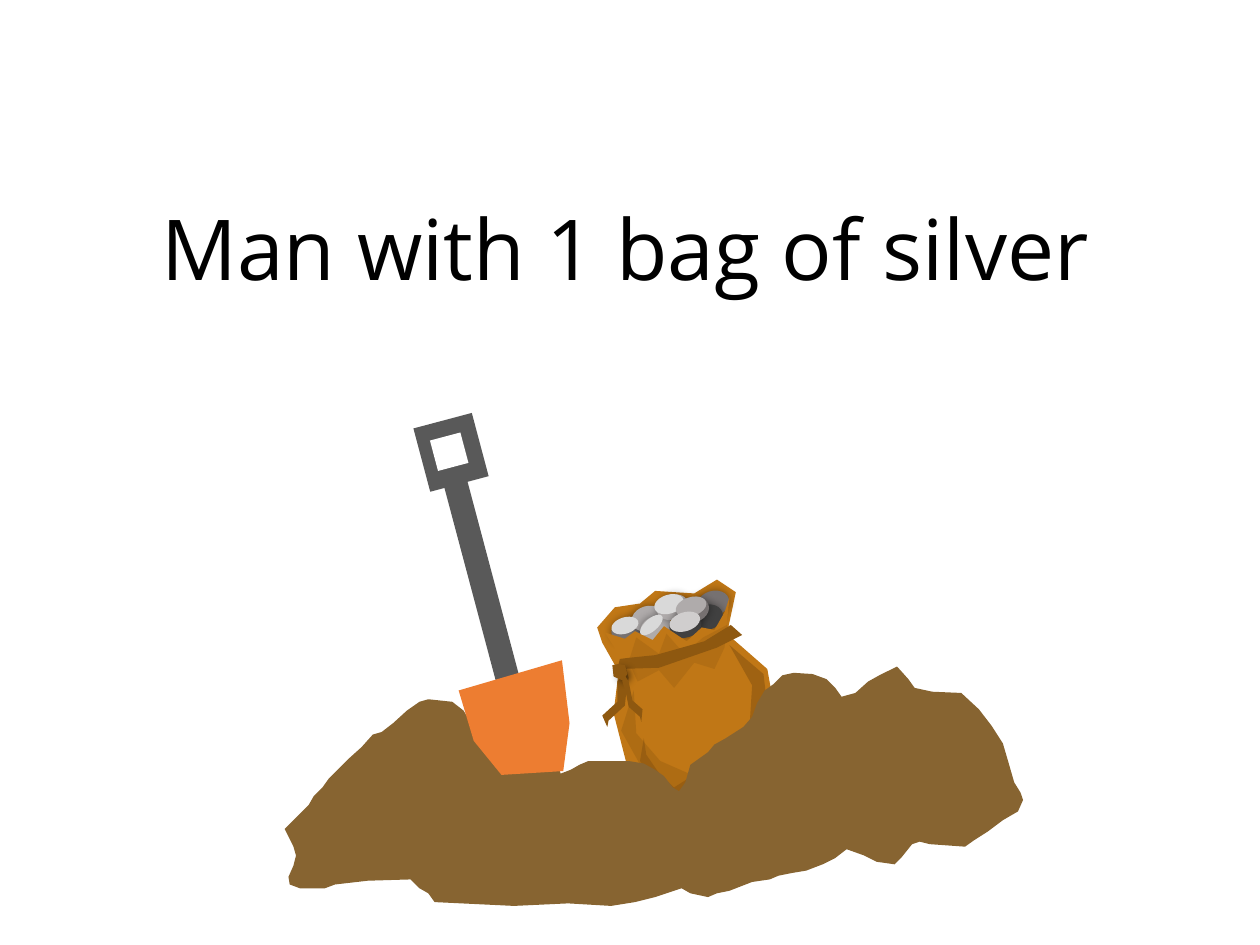
from lxml import etree
from pptx import Presentation
from pptx.dml.color import RGBColor
from pptx.enum import shapes, text
from pptx.oxml.ns import qn
from pptx.util import Inches, Pt

BLACK = RGBColor(0x00, 0x00, 0x00)
WHITE = RGBColor(0xFF, 0xFF, 0xFF)
SACK = RGBColor(0xC0, 0x77, 0x16)
FOLD = RGBColor(0x8E, 0x58, 0x10)
SOIL = RGBColor(0x87, 0x64, 0x31)
STEEL = RGBColor(0x59, 0x59, 0x59)
BLADE = RGBColor(0xED, 0x7D, 0x31)
COIN_BLACK = RGBColor(0x40, 0x40, 0x40)
COIN_DARK = RGBColor(0x76, 0x71, 0x71)
COIN_MID = RGBColor(0xAF, 0xAB, 0xAB)
COIN_PALE = RGBColor(0xD0, 0xCE, 0xCE)
COIN_LIGHT = RGBColor(0xD9, 0xD9, 0xD9)

BAG_TILT = -17.4
SHOVEL_TILT = -14.9

# Outlines in inches from the top left corner of each region
SACK_BODY = [(0.78, 1.1), (0.91, 1.33), (0.87, 1.66), (0.97, 2.05), (1.2, 2.38), (1.43, 2.45),
             (1.63, 2.44), (1.94, 2.34), (2.14, 2.16), (2.18, 1.81), (2.09, 1.31), (1.77, 1.03),
             (1.84, 0.7), (1.69, 0.6), (1.51, 0.71), (1.2, 0.69), (1.08, 0.79), (0.88, 0.82),
             (0.74, 0.98)]
SACK_FRONT = [(0.8, 1.02), (0.96, 1.07), (1.04, 1.01), (1.18, 1.08), (1.27, 0.97), (1.45, 1.09),
              (1.57, 0.98), (1.67, 1), (1.75, 0.86), (1.79, 0.74), (1.76, 1.02), (1.66, 1.21),
              (1.14, 1.38), (0.96, 1.27)]
DEEP_SHADE = [(1.08, 2.04), (1.28, 2.33), (1.53, 2.39), (1.91, 2.27), (2.1, 2.09), (2.11, 1.77),
              (2.06, 1.35), (1.79, 1.12), (1.97, 1.44), (1.95, 1.76), (1.82, 2), (1.54, 2.13),
              (1.35, 2.25), (1.24, 2.15), (1.13, 1.99), (1.11, 1.86)]
SOFT_SHADE = [(2.12, 1.78), (2.12, 2.11), (1.94, 2.29), (1.56, 2.41), (1.3, 2.38), (1.12, 2.14),
              (0.93, 1.8), (1.03, 1.48), (1.05, 1.82), (1.24, 2.04), (1.49, 2.15), (1.79, 2.1),
              (2.01, 2.08), (2.05, 1.95), (2.05, 1.76), (2, 1.66)]
NECK_FOLDS = [(0.99, 1.25), (1.06, 1.41), (1.23, 1.32), (1.35, 1.46), (1.51, 1.26), (1.67, 1.31),
              (1.75, 1.14), (1.77, 0.96), (1.58, 1.06), (1.43, 1.19), (1.29, 1.03), (1.23, 1.19),
              (1.05, 1.06)]
ROPE = [(0.9, 1.31), (1.23, 1.3), (1.69, 1.14), (1.89, 1.04), (1.8, 0.96), (1.59, 1.09),
        (1.2, 1.2), (1, 1.22), (0.92, 1.23)]
LEFT_TAIL = [(0.78, 1.68), (0.9, 1.57), (0.9, 1.41), (0.97, 1.31), (0.99, 1.38), (0.97, 1.5),
             (0.96, 1.6), (0.83, 1.72), (0.82, 1.77)]
KNOT = [(0.86, 1.28), (0.87, 1.37), (0.94, 1.4), (0.98, 1.35), (0.96, 1.28), (0.91, 1.27)]
RIGHT_TAIL = [(1.1, 1.63), (1.02, 1.56), (0.99, 1.41), (0.94, 1.33), (0.94, 1.41), (0.97, 1.51),
              (0.99, 1.61), (1.08, 1.69), (1.09, 1.73)]
COIN_EDGES = [(0.85, 0.9, COIN_DARK), (1.01, 0.81, COIN_MID), (1.08, 0.89, COIN_MID),
              (1.21, 0.72, COIN_MID), (1.53, 0.69, COIN_DARK), (1.48, 0.8, COIN_BLACK),
              (1.31, 0.86, COIN_BLACK), (1.37, 0.74, COIN_DARK)]
COIN_FACES = [((1.19, 0.72, 0.24, 0.15), COIN_LIGHT, BAG_TILT),
              ((1.36, 0.74, 0.25, 0.15), COIN_MID, BAG_TILT),
              ((0.85, 0.9, 0.22, 0.13), COIN_LIGHT, BAG_TILT),
              ((1.06, 0.91, 0.22, 0.1), COIN_LIGHT, -40.8),
              ((1.31, 0.86, 0.25, 0.15), COIN_PALE, BAG_TILT)]
SHOVEL_BLADE = [(0.98, 3.15), (0.76, 2.88), (0.64, 2.48), (1.46, 2.24), (1.52, 2.74), (1.47, 3.12)]
MOUND = [(0.26, 1.58), (0.45, 1.39), (0.49, 1.32), (0.56, 1.25), (0.61, 1.18), (0.77, 1.02),
         (0.87, 0.93), (0.96, 0.83), (1.03, 0.81), (1.12, 0.74), (1.23, 0.64), (1.33, 0.57),
         (1.4, 0.55), (1.59, 0.57), (1.68, 0.64), (1.75, 0.76), (1.8, 0.83), (1.82, 0.9),
         (1.89, 0.95), (1.96, 0.9), (2.08, 0.88), (2.27, 0.9), (2.36, 0.94), (2.41, 1),
         (2.45, 1.14), (2.53, 1.11), (2.6, 1.07), (2.67, 1.04), (2.99, 1.04), (3.11, 1.06),
         (3.2, 1.11), (3.27, 1.16), (3.34, 1.25), (3.39, 1.28), (3.44, 1.21), (3.48, 1.07),
         (3.62, 0.97), (3.67, 0.91), (3.76, 0.86), (3.9, 0.77), (3.97, 0.69), (4.01, 0.58),
         (4.07, 0.48), (4.14, 0.43), (4.21, 0.36), (4.3, 0.34), (4.45, 0.35), (4.56, 0.39),
         (4.63, 0.46), (4.68, 0.53), (4.79, 0.5), (4.89, 0.41), (4.98, 0.36), (5.12, 0.29),
         (5.21, 0.39), (5.26, 0.46), (5.4, 0.49), (5.63, 0.5), (5.77, 0.63), (5.87, 0.76),
         (5.96, 0.9), (6.01, 1.07), (6.05, 1.21), (6.1, 1.29), (6.12, 1.35), (6.08, 1.44),
         (5.96, 1.51), (5.84, 1.6), (5.73, 1.67), (5.66, 1.72), (5.38, 1.7), (5.3, 1.68),
         (5.24, 1.7), (5.16, 1.8), (5.1, 1.86), (4.96, 1.84), (4.86, 1.79), (4.72, 1.74),
         (4.63, 1.81), (4.53, 1.86), (4.4, 1.91), (4.28, 1.93), (4.18, 1.95), (4.11, 1.98),
         (3.97, 2), (3.79, 2.07), (3.69, 2.09), (3.62, 2.12), (3.48, 2.09), (3.41, 2.05),
         (3.32, 2.08), (3.2, 2.12), (3.04, 2.16), (2.85, 2.19), (2.51, 2.17), (2.08, 2.19),
         (1.45, 2.16), (1.4, 2.09), (1.33, 2.05), (1.26, 1.98), (0.92, 1.99), (0.66, 2.02),
         (0.58, 2.05), (0.38, 2.05), (0.3, 2.02), (0.29, 1.96), (0.33, 1.87), (0.35, 1.79),
         (0.33, 1.72)]


def paint(part, color, alpha=None):
    part.shadow.inherit = False
    part.fill.solid()
    part.fill.fore_color.rgb = color
    part.line.fill.background()
    if alpha is not None:
        tint = part.fill._xPr.find(qn("a:solidFill"))[0]
        etree.SubElement(tint, qn("a:alpha"), val=str(alpha * 1000))


def cast_shadow(part, blur, distance=0, angle=0):
    effects = part._element.spPr.find(qn("a:effectLst"))
    shadow = etree.SubElement(effects, qn("a:outerShdw"), blurRad=str(Pt(blur)),
                              dist=str(Pt(distance)), dir=str(angle * 60000), rotWithShape="0")
    tint = etree.SubElement(shadow, qn("a:srgbClr"), val=str(BLACK))
    etree.SubElement(tint, qn("a:alpha"), val="40000")


def add_outline(parent, origin, points, color, alpha=None):
    start, *rest = [(Inches(origin[0] + x), Inches(origin[1] + y)) for x, y in points]
    builder = parent.build_freeform(*start)
    builder.add_line_segments(rest, close=True)
    part = builder.convert_to_shape()
    paint(part, color, alpha)
    return part


def add_preset(parent, origin, kind, box, color, tilt):
    x, y, width, height = box
    part = parent.add_shape(kind, Inches(origin[0] + x), Inches(origin[1] + y),
                            Inches(width), Inches(height))
    part.rotation = tilt
    paint(part, color)
    return part


def place_title(slide, left, top, width, height):
    title = slide.shapes.title
    title.left, title.top = Inches(left), Inches(top)
    title.width, title.height = Inches(width), Inches(height)
    frame = title.text_frame
    frame.word_wrap = True
    frame.auto_size = text.MSO_AUTO_SIZE.SHAPE_TO_FIT_TEXT
    frame.vertical_anchor = text.MSO_ANCHOR.TOP
    line = frame.paragraphs[0]
    line.alignment = text.PP_ALIGN.CENTER
    words = line.add_run()
    words.text = "Man with 1 bag of silver"
    words.font.name = "Open Sans"
    words.font.size = Pt(48)
    words.font.color.rgb = BLACK


def draw_bag(slide, left, top):
    origin = left, top
    bag = slide.shapes.add_group_shape().shapes
    oval = shapes.MSO_SHAPE.OVAL
    add_outline(bag, origin, SACK_BODY, SACK)
    # Coins behind the front of the sack
    for x, y, color in COIN_EDGES:
        coin = add_preset(bag, origin, oval, (x, y, 0.26, 0.2), color, BAG_TILT)
        cast_shadow(coin, 5)
    # Front, shading and rope
    add_outline(bag, origin, SACK_FRONT, SACK)
    for points, alpha in ((DEEP_SHADE, 65), (SOFT_SHADE, 35), (NECK_FOLDS, 28),
                          (ROPE, None), (LEFT_TAIL, None)):
        add_outline(bag, origin, points, FOLD, alpha)
    cast_shadow(add_outline(bag, origin, KNOT, FOLD), 4, 3, 45)
    add_outline(bag, origin, RIGHT_TAIL, FOLD)
    # Bright coin faces
    for box, color, tilt in COIN_FACES:
        add_preset(bag, origin, oval, box, color, tilt)


def draw_shovel(slide, left, top):
    origin = left, top
    shovel = slide.shapes.add_group_shape().shapes
    bar = shapes.MSO_SHAPE.RECTANGLE
    # Shaft and grip, blade, then the opening in the grip
    for box in ((0.73, 0.68, 0.19, 1.88), (0.34, 0.33, 0.48, 0.52)):
        add_preset(shovel, origin, bar, box, STEEL, SHOVEL_TILT)
    add_outline(shovel, origin, SHOVEL_BLADE, BLADE)
    add_preset(shovel, origin, bar, (0.44, 0.46, 0.25, 0.25), WHITE, SHOVEL_TILT)


def main():
    deck = Presentation()
    deck.slide_width, deck.slide_height = Inches(10), Inches(7.5)
    slide = deck.slides.add_slide(deck.slide_layouts[5])
    place_title(slide, 0.58, 1.51, 8.77, 0.91)
    draw_bag(slide, 4, 4)
    add_outline(slide.shapes, (2, 5), MOUND, SOIL)
    draw_shovel(slide, 3, 3)
    deck.save("out.pptx")


if __name__ == "__main__":
    main()
